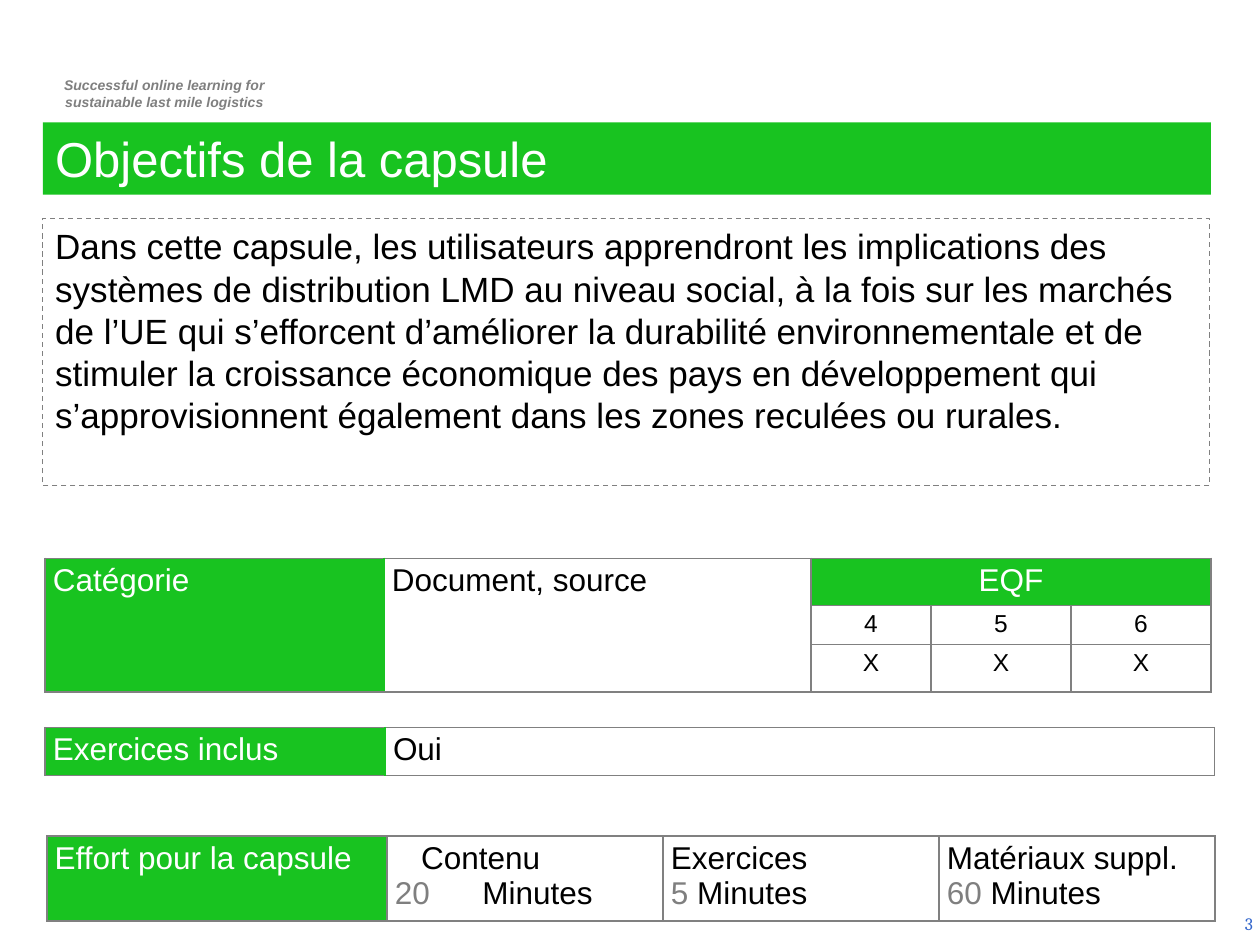
from lxml.etree import SubElement
from pptx import Presentation
from pptx.dml.color import RGBColor
from pptx.enum.dml import MSO_LINE
from pptx.enum.shapes import MSO_SHAPE
from pptx.enum.text import MSO_ANCHOR, PP_ALIGN
from pptx.oxml.ns import qn
from pptx.util import Pt

GREEN, GRAY, LINE_GRAY = "18C320", "7F7F7F", "808080"
BLACK, WHITE, BLUE = "000000", "FFFFFF", "3366CC"


def color(value):
    return RGBColor.from_string(value)


class SlideBuilder:
    text_format = {"name": "Arial", "size": 18, "bold": False, "italic": False}
    cell_margins = {"margin_left": 4.5, "margin_right": 4.5,
                    "margin_top": 2.7, "margin_bottom": 2.7}

    def __init__(self, presentation):
        self.slide = presentation.slides.add_slide(presentation.slide_layouts[6])

    def fill_text(self, frame, paragraphs, alignment=PP_ALIGN.LEFT, **changes):
        """Fill a frame; each paragraph is a list of (text, colour) runs."""
        frame.word_wrap = True
        values = {**self.text_format, **changes}
        values["size"] = Pt(values["size"])
        for index, runs in enumerate(paragraphs):
            paragraph = frame.add_paragraph() if index else frame.paragraphs[0]
            paragraph.alignment = alignment
            for text, text_color in runs:
                run = paragraph.add_run()
                run.text = text
                for name, value in values.items():
                    setattr(run.font, name, value)
                run.font.color.rgb = color(text_color)

    def text(self, box, paragraphs, alignment, anchor=MSO_ANCHOR.TOP, **changes):
        shape = self.slide.shapes.add_textbox(*map(Pt, box))
        shape.text_frame.vertical_anchor = anchor
        self.fill_text(shape.text_frame, paragraphs, alignment, **changes)

    def panel(self, box, paragraphs, fill=None, size=20):
        """Add a filled banner, or a dashed frame when there is no fill."""
        shape = self.slide.shapes.add_shape(MSO_SHAPE.RECTANGLE, *map(Pt, box))
        shape.shadow.inherit = False
        if fill:
            shape.fill.solid()
            shape.fill.fore_color.rgb = color(fill)
            shape.line.fill.background()
        else:
            shape.fill.background()
            shape.line.color.rgb = color(LINE_GRAY)
            shape.line.width = Pt(0.75)
            shape.line.dash_style = MSO_LINE.DASH
        shape.text_frame.vertical_anchor = MSO_ANCHOR.TOP
        self.fill_text(shape.text_frame, paragraphs, size=size)

    def table(self, left, top, widths, heights, green_seam=True):
        """Add a bordered table whose first column is the green label."""
        table = self.slide.shapes.add_table(
            len(heights), len(widths), Pt(left), Pt(top),
            Pt(sum(widths)), Pt(sum(heights))).table
        table.first_row = table.horz_banding = False
        for column, width in zip(table.columns, widths):
            column.width = Pt(width)
        for row, height in zip(table.rows, heights):
            row.height = Pt(height)
            for index, cell in enumerate(row.cells):
                for side in "LRTB":
                    seam = green_seam and (index, side) in ((0, "R"), (1, "L"))
                    self.border(cell, side, GREEN if seam else LINE_GRAY)
        return table

    def border(self, cell, side, line_color):
        line = SubElement(cell._tc.get_or_add_tcPr(), qn(f"a:ln{side}"), w=str(Pt(1)))
        SubElement(SubElement(line, qn("a:solidFill")), qn("a:srgbClr"), val=line_color)

    def cell(self, cell, paragraphs, fill=None, alignment=PP_ALIGN.LEFT, size=18):
        for name, value in self.cell_margins.items():
            setattr(cell, name, Pt(value))
        if fill:
            cell.fill.solid()
            cell.fill.fore_color.rgb = color(fill)
        else:
            cell.fill.background()
        self.fill_text(cell.text_frame, paragraphs, alignment, size=size)

    def indent(self, paragraph, distance):
        paragraph._p.get_or_add_pPr().set("marL", str(Pt(distance)))

    def tab_stop(self, paragraph, position):
        stops = SubElement(paragraph._p.get_or_add_pPr(), qn("a:tabLst"))
        SubElement(stops, qn("a:tab"), pos=str(Pt(position)), algn="l")


def main():
    presentation = Presentation()
    presentation.slide_width, presentation.slide_height = Pt(720), Pt(540)
    builder = SlideBuilder(presentation)

    builder.text((21, 40.3, 146, 26.6),
                 [[("Successful online learning for", GRAY)],
                  [("sustainable last mile logistics", GRAY)]],
                 PP_ALIGN.CENTER, size=8, bold=True, italic=True)
    builder.text((555, 513.4, 168, 28.8), [[("3", BLUE)]], PP_ALIGN.RIGHT,
                 MSO_ANCHOR.MIDDLE, name="Cambria", size=10)
    builder.panel((24.5, 70, 667.5, 41.2),
                  [[("Objectifs de la capsule", WHITE)]], GREEN, 28)
    builder.panel((24.5, 125, 666.7, 152.6), [[(
        "Dans cette capsule, les utilisateurs apprendront les implications des "
        "systèmes de distribution LMD au niveau social, à la fois sur les marchés "
        "de l’UE qui s’efforcent d’améliorer la durabilité environnementale et de "
        "stimuler la croissance économique des pays en développement qui "
        "s’approvisionnent également dans les zones reculées ou rurales.", BLACK)]])

    category = builder.table(25.7, 319, (193.7, 244, 68.6, 80, 80), (26.8, 22.3, 26.9))
    for column in (0, 1):
        category.cell(0, column).merge(category.cell(2, column))
    category.cell(0, 2).merge(category.cell(0, 4))
    builder.cell(category.cell(0, 0), [[("Catégorie", WHITE)]], GREEN)
    builder.cell(category.cell(0, 1), [[("Document, source", BLACK)]])
    builder.cell(category.cell(0, 2), [[("EQF", WHITE)]], GREEN, PP_ALIGN.CENTER)
    for column, level in enumerate("456", start=2):
        for row, text in enumerate((level, "X"), start=1):
            builder.cell(category.cell(row, column), [[(text, BLACK)]],
                         alignment=PP_ALIGN.CENTER, size=14)

    exercises = builder.table(25.7, 415.8, (194.4, 474), (27.2,))
    builder.cell(exercises.cell(0, 0), [[("Exercices inclus", WHITE)]], GREEN)
    builder.cell(exercises.cell(0, 1), [[("Oui", BLACK)]])

    effort = builder.table(26.8, 477.6, (194.4, 157.7, 157.7, 157.7), (48.2,),
                           green_seam=False)
    builder.cell(effort.cell(0, 0), [[("Effort pour la capsule", WHITE)]], GREEN)
    durations = (("Contenu", "20", "\tMinutes"), ("Exercices", "5", " Minutes"),
                 ("Matériaux suppl.", "60", " Minutes"))
    for column, (heading, amount, unit) in enumerate(durations, start=1):
        builder.cell(effort.cell(0, column),
                     [[(heading, BLACK)], [(amount, GRAY), (unit, BLACK)]])
    heading, duration = effort.cell(0, 1).text_frame.paragraphs
    builder.indent(heading, 15)
    builder.tab_stop(duration, 50)

    presentation.save("out.pptx")


if __name__ == "__main__":
    main()
